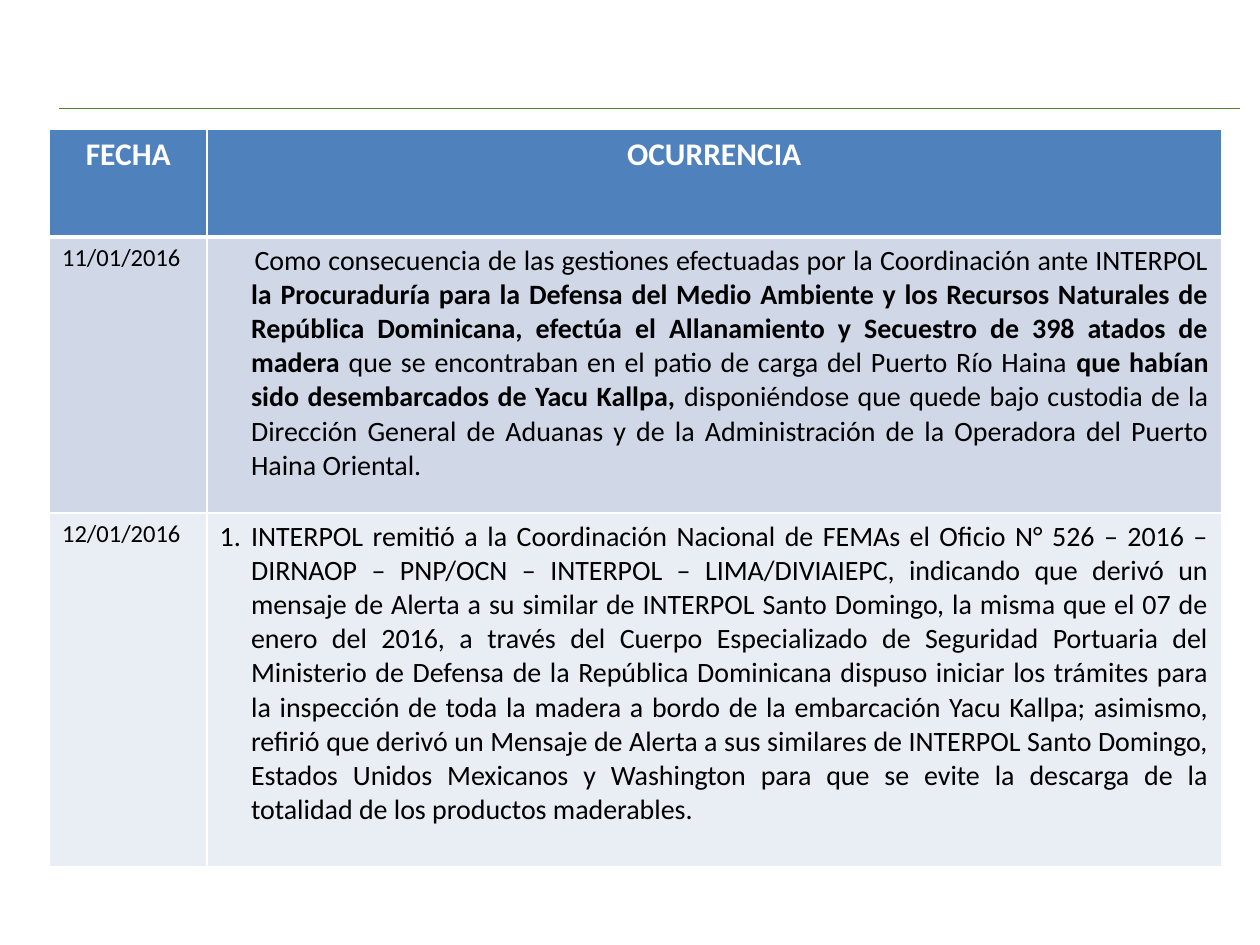
from lxml import etree
from pptx import Presentation
from pptx.dml.color import RGBColor
from pptx.enum.shapes import MSO_CONNECTOR
from pptx.enum.text import PP_ALIGN
from pptx.oxml.ns import qn
from pptx.util import Pt

STRAIGHT = MSO_CONNECTOR.STRAIGHT
CENTER = PP_ALIGN.CENTER
JUSTIFY = PP_ALIGN.JUSTIFY

WHITE = RGBColor(0xFF, 0xFF, 0xFF)
BLACK = RGBColor(0x00, 0x00, 0x00)
GREEN = RGBColor(0x54, 0x82, 0x35)
HEADER_BLUE = RGBColor(0x4F, 0x81, 0xBD)
BAND_DARK = RGBColor(0xD0, 0xD8, 0xE8)
BAND_LIGHT = RGBColor(0xE9, 0xED, 0xF4)

FONT = "Calibri"
COLUMN_WIDTHS = (90, 579.6)
ROW_HEIGHTS = (61.9, 157.7, 202.3)

HEADINGS = ("FECHA", "OCURRENCIA")
SEIZURE = (
    ("Como consecuencia de las gestiones efectuadas por la Coordinación ante INTERPOL ", False),
    ("la Procuraduría para la Defensa del Medio Ambiente y los Recursos Naturales de "
     "República Dominicana, efectúa el Allanamiento y Secuestro de 398 atados de madera ", True),
    ("que se encontraban en el patio de carga del Puerto Río Haina ", False),
    ("que habían sido desembarcados de Yacu Kallpa, ", True),
    ("disponiéndose que quede bajo custodia de la Dirección General de Aduanas y de la "
     "Administración de la Operadora del Puerto Haina Oriental.", False),
)
ALERT = (
    ("INTERPOL remitió a la Coordinación Nacional de FEMAs el Oficio N° 526 – 2016 – "
     "DIRNAOP – PNP/OCN – INTERPOL – LIMA/DIVIAIEPC, indicando que derivó un mensaje de "
     "Alerta a su similar de INTERPOL Santo Domingo, la misma que el 07 de enero del 2016, "
     "a través del Cuerpo Especializado de Seguridad Portuaria del Ministerio de Defensa de "
     "la República Dominicana dispuso iniciar los trámites para la inspección de toda la "
     "madera a bordo de la embarcación Yacu Kallpa; asimismo, refirió que derivó un Mensaje "
     "de Alerta a sus similares de INTERPOL Santo Domingo, Estados Unidos Mexicanos y "
     "Washington para que se evite la descarga de la totalidad de los productos maderables.",
     False),
)
EVENTS = (
    ("11/01/2016", SEIZURE, BAND_DARK, dict(margin=18, indent=2)),
    ("12/01/2016", ALERT, BAND_LIGHT, dict(margin=18, indent=-18, numbered=True)),
)


def write(cell, spans, size, color=BLACK, align=JUSTIFY, margin=0, indent=0, numbered=False):
    para = cell.text_frame.paragraphs[0]
    para.alignment = align
    properties = para._p.get_or_add_pPr()
    properties.set("marL", str(Pt(margin)))
    properties.set("indent", str(Pt(indent)))
    if numbered:
        etree.SubElement(properties, qn("a:buFont"), typeface="+mj-lt")
        etree.SubElement(properties, qn("a:buAutoNum"), type="arabicPeriod")
    for text, bold in spans:
        span = para.add_run()
        span.text = text
        span.font.name = FONT
        span.font.size = Pt(size)
        span.font.bold = bold
        span.font.color.rgb = color


def paint(cell, color, top=1, bottom=1):
    properties = cell._tc.get_or_add_tcPr()
    for side, width in (("L", 1), ("R", 1), ("T", top), ("B", bottom)):
        border = etree.SubElement(properties, qn(f"a:ln{side}"), w=str(Pt(width)))
        fill = etree.SubElement(border, qn("a:solidFill"))
        etree.SubElement(fill, qn("a:srgbClr"), val=str(WHITE))
    cell.fill.solid()
    cell.fill.fore_color.rgb = color


def add_rule(page, left, top, width):
    rule = page.shapes.add_connector(STRAIGHT, Pt(left), Pt(top), Pt(left + width), Pt(top))
    rule.line.color.rgb = GREEN
    rule.line.width = Pt(0.5)
    etree.SubElement(rule._element.spPr, qn("a:effectLst"))


def add_events_table(page, left, top, width, height):
    frame = page.shapes.add_table(len(EVENTS) + 1, len(HEADINGS),
                                  Pt(left), Pt(top), Pt(width), Pt(height))
    table = frame.table
    for column, share in zip(table.columns, COLUMN_WIDTHS):
        column.width = Pt(width * share / sum(COLUMN_WIDTHS))
    for row, share in zip(table.rows, ROW_HEIGHTS):
        row.height = Pt(height * share / sum(ROW_HEIGHTS))
    for index, heading in enumerate(HEADINGS):
        cell = table.cell(0, index)
        write(cell, [(heading, True)], 18, color=WHITE, align=CENTER)
        paint(cell, HEADER_BLUE, bottom=3)
    for index, (date, account, color, layout) in enumerate(EVENTS, start=1):
        date_cell, account_cell = table.cell(index, 0), table.cell(index, 1)
        write(date_cell, [(date, False)], 14)
        write(account_cell, account, 16, **layout)
        for cell in (date_cell, account_cell):
            paint(cell, color, top=3 if index == 1 else 1)


def main():
    deck = Presentation()
    deck.slide_width, deck.slide_height = Pt(720), Pt(540)
    page = deck.slides.add_slide(deck.slide_layouts[6])
    add_rule(page, 33.8, 61.9, 674.7)
    add_events_table(page, 28.3, 73.6, 669.6, 421.9)
    deck.save("out.pptx")


if __name__ == "__main__":
    main()
